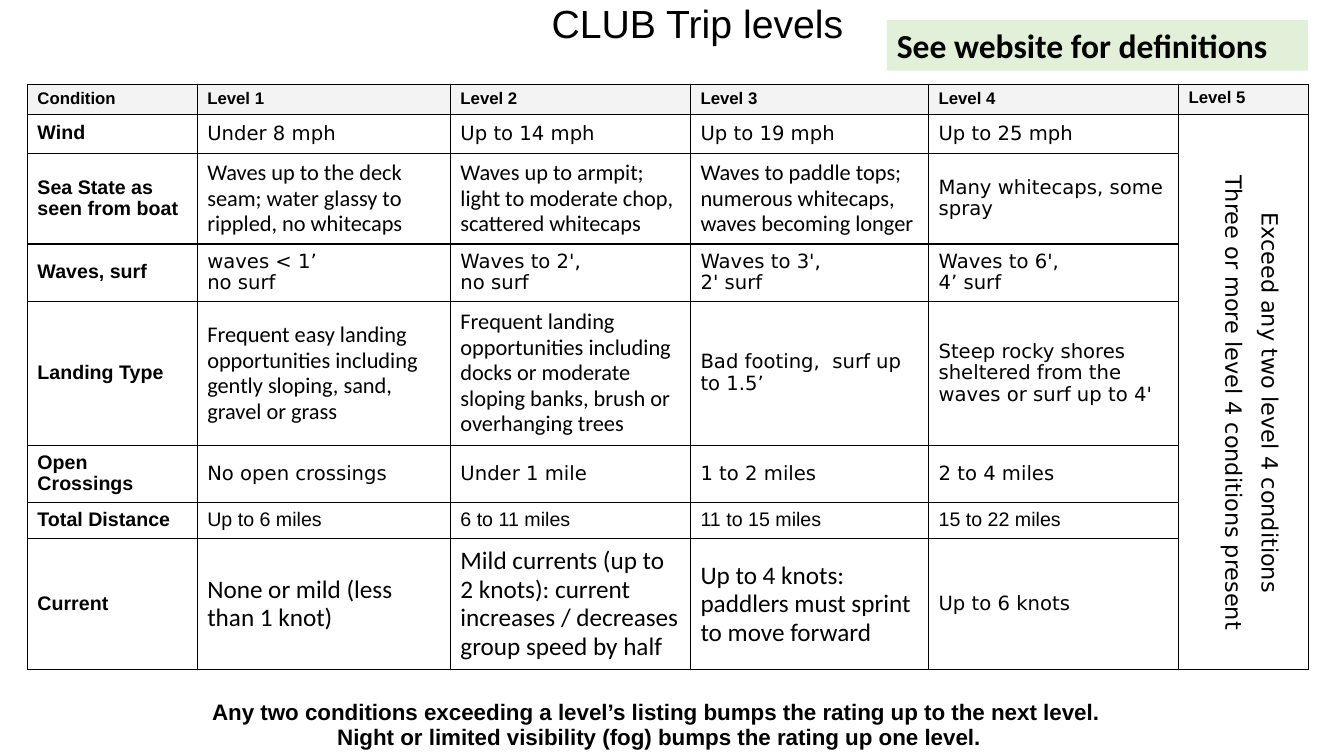
"""Build the trip levels slide: a table of paddling conditions by level."""
from lxml import etree
from pptx import Presentation
from pptx.dml.color import RGBColor
from pptx.enum.shapes import MSO_SHAPE
from pptx.enum.text import MSO_ANCHOR, MSO_AUTO_SIZE, PP_ALIGN
from pptx.oxml.ns import qn
from pptx.util import Cm, Pt

RECT = MSO_SHAPE.RECTANGLE
TOP, MID = MSO_ANCHOR.TOP, MSO_ANCHOR.MIDDLE
LEFT, MIDDLE = PP_ALIGN.LEFT, PP_ALIGN.CENTER
FIXED = MSO_AUTO_SIZE.NONE
BLACK, GREY, GREEN = "000000", "F3F3F3", "E2F0D9"
TIGHT = 0.93

TITLE = "CLUB Trip levels"
BADGE = "See website for definitions"
NOTES = ["Any two conditions exceeding a level’s listing bumps the rating up to the next level. ",
         "Night or limited visibility (fog) bumps the rating up one level."]
LAST = ["Exceed any two level 4 conditions",
        "Three or more level 4 conditions present"]

STYLES = {
    "head": ("Arial", 12, True),
    "name": ("Arial", 14, True),
    "plain": ("Arial", 14, False),
    "wide": ("DejaVu Sans", 14, False),
    "text": ("Calibri", 16, False),
    "large": ("Calibri", 18, False),
    "side": ("DejaVu Sans", 16, False),
    "note": ("Arial", 16, True),
    "badge": ("Calibri", 24, True),
    "title": ("Arial", 28, False),
}
WIDTHS = [4.28, 6.38, 6.05, 6, 6.3, 3.28]
HEADS = ["Condition", "Level 1", "Level 2", "Level 3", "Level 4", "Level 5"]
HEAD_TALL = 0.76
ROWS = [
    (0.98, "Wind", [
        ("wide", "Under 8 mph"), ("wide", "Up to 14 mph"),
        ("wide", "Up to 19 mph"), ("wide", "Up to 25 mph")]),
    (2.29, "Sea State as seen from boat", [
        ("text", "Waves up to the deck seam; water glassy to rippled, no whitecaps"),
        ("text", "Waves up to armpit; light to moderate chop, scattered whitecaps"),
        ("text", "Waves to paddle tops; numerous whitecaps, waves becoming longer"),
        ("wide", "Many whitecaps, some spray")]),
    (1.44, "Waves, surf", [
        ("wide", "waves < 1’\nno surf"), ("wide", "Waves to 2',\nno surf"),
        ("wide", "Waves to 3',\n2' surf"), ("wide", "Waves to 6',\n4’ surf")]),
    (3.63, "Landing Type", [
        ("text", "Frequent easy landing opportunities including gently sloping, "
                 "sand, gravel or grass"),
        ("text", "Frequent landing opportunities including docks or moderate "
                 "sloping banks, brush or overhanging trees"),
        ("wide", "Bad footing,  surf up to 1.5’"),
        ("wide", "Steep rocky shores sheltered from the waves or surf up to 4'")]),
    (1.44, "Open Crossings", [
        ("wide", "No open crossings"), ("wide", "Under 1 mile"),
        ("wide", "1 to 2 miles"), ("wide", "2 to 4 miles")]),
    (0.91, "Total Distance", [
        ("plain", "Up to 6 miles"), ("plain", "6 to 11 miles"),
        ("plain", "11 to 15 miles"), ("plain", "15 to 22 miles")]),
    (3.3, "Current", [
        ("large", "None or mild (less than 1 knot)"),
        ("large", "Mild currents (up to 2 knots): current increases / decreases "
                  "group speed by half"),
        ("large", "Up to 4 knots: paddlers must sprint to move forward"),
        ("wide", "Up to 6 knots")]),
]


def color(code):
    return RGBColor.from_string(code)


def add_run(para, text, style):
    run = para.add_run()
    run.text = text
    font = run.font
    font.name, size, font.bold = STYLES[style]
    font.size = Pt(size)
    font.color.rgb = color(BLACK)


def write(frame, lines, style, align=LEFT, space=TIGHT, gap=0):
    for i, line in enumerate(lines):
        para = frame.add_paragraph() if i else frame.paragraphs[0]
        para.alignment = align
        para.line_spacing = space
        para.space_before = Pt(gap if i else 0)
        add_run(para, line, style)


def frame_cell(cell, fill):
    props = cell._tc.get_or_add_tcPr()
    for side in ("lnL", "lnR", "lnT", "lnB"):
        line = etree.SubElement(props, qn(f"a:{side}"), w=str(Pt(1)))
        solid = etree.SubElement(line, qn("a:solidFill"))
        etree.SubElement(solid, qn("a:srgbClr"), val=BLACK)
    if fill:
        cell.fill.solid()
        cell.fill.fore_color.rgb = color(fill)
    else:
        cell.fill.background()


def add_grid(slide):
    talls = [HEAD_TALL] + [tall for tall, _, _ in ROWS]
    shape = slide.shapes.add_table(len(talls), len(WIDTHS), Cm(0.69), Cm(2.12),
                                   Cm(sum(WIDTHS)), Cm(sum(talls)))
    grid = shape.table
    grid.first_row = grid.horz_banding = False
    for col, wide in zip(grid.columns, WIDTHS):
        col.width = Cm(wide)
    for row, tall in zip(grid.rows, talls):
        row.height = Cm(tall)
    end = len(WIDTHS) - 1
    grid.cell(1, end).merge(grid.cell(len(ROWS), end))
    table = [[("head", text) for text in HEADS]]
    table += [[("name", name)] + cells for _, name, cells in ROWS]
    for r, cells in enumerate(table):
        for c in range(len(WIDTHS)):
            cell = grid.cell(r, c)
            frame_cell(cell, None if r else GREY)
            if c < len(cells):
                style, text = cells[c]
                cell.vertical_anchor = TOP if c == end else MID
                write(cell.text_frame, text.split("\n"), style)


def add_box(slide, left, top, wide, tall):
    box = slide.shapes.add_textbox(Cm(left), Cm(top), Cm(wide), Cm(tall))
    box.text_frame.word_wrap = True
    return box


def main():
    deck = Presentation()
    deck.slide_width, deck.slide_height = Cm(33.87), Cm(19.05)
    slide = deck.slides.add_slide(deck.slide_layouts[5])
    add_grid(slide)

    title = slide.shapes.title
    title.left, title.top = Cm(5.51), Cm(0)
    title.width, title.height = Cm(24.13), Cm(1.27)
    title.text_frame.auto_size = FIXED
    title.text_frame.vertical_anchor = MID
    write(title.text_frame, [TITLE], "title", MIDDLE)

    foot = add_box(slide, 4.65, 17.53, 23.93, 1.52)
    para = foot.text_frame.paragraphs[0]
    para.alignment, para.line_spacing = MIDDLE, TIGHT
    for i, line in enumerate(NOTES):
        if i:
            para.add_line_break()
        add_run(para, line, "note")

    side = add_box(slide, 24.41, 9.22, 14.17, 1.85)
    side.rotation = 90
    write(side.text_frame, LAST, "side", MIDDLE, gap=8)

    badge = slide.shapes.add_shape(RECT, Cm(22.35), Cm(0.51), Cm(10.62), Cm(1.27))
    badge.shadow.inherit = False
    badge.fill.solid()
    badge.fill.fore_color.rgb = color(GREEN)
    badge.line.fill.background()
    badge.text_frame.word_wrap = True
    write(badge.text_frame, [BADGE], "badge", space=1)

    deck.save("out.pptx")


if __name__ == "__main__":
    main()
